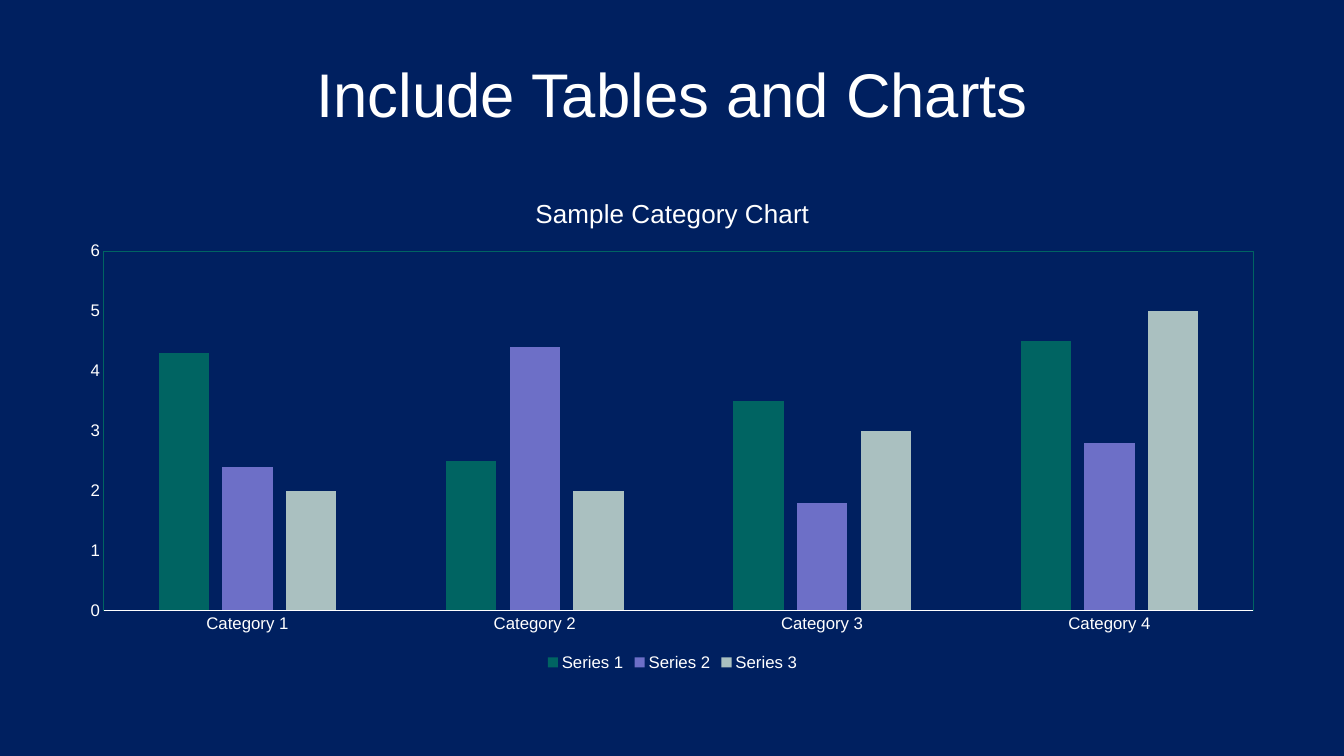
"""Build a slide with a title and a clustered column chart."""
from pptx import Presentation
from pptx.chart.data import CategoryChartData
from pptx.dml.color import RGBColor
from pptx.enum.chart import XL_CHART_TYPE, XL_LEGEND_POSITION, XL_TICK_MARK
from pptx.enum.text import MSO_ANCHOR, PP_ALIGN
from pptx.oxml import parse_xml
from pptx.oxml.ns import nsdecls
from pptx.util import Inches, Pt

COLUMNS = XL_CHART_TYPE.COLUMN_CLUSTERED
BOTTOM = XL_LEGEND_POSITION.BOTTOM
NO_TICK = XL_TICK_MARK.NONE
MIDDLE = MSO_ANCHOR.MIDDLE
CENTER = PP_ALIGN.CENTER

TITLE = "Include Tables and Charts"
CHART_TITLE = "Sample Category Chart"
CATEGORIES = ["Category 1", "Category 2", "Category 3", "Category 4"]
SERIES = [
    ("Series 1", (4.3, 2.5, 3.5, 4.5), "green"),
    ("Series 2", (2.4, 4.4, 1.8, 2.8), "violet"),
    ("Series 3", (2, 2, 3, 5), "grey"),
]
COLORS = {
    "navy": "002060",
    "white": "FFFFFF",
    "green": "006462",
    "violet": "6D6FC7",
    "grey": "AAC0C0",
}
FONT = "Arial"
TITLE_BOX = (0.67, 0.3, 12, 1.25)
CHART_BOX = (0.67, 1.75, 12, 4.95)
PLOT_LAYOUT = {"x": 0.03, "y": 0.15, "w": 0.95, "h": 0.72}


def color(name):
    return RGBColor.from_string(COLORS[name])


def set_values(target, values):
    for name, value in values.items():
        setattr(target, name, value)


def style_font(font, size):
    set_values(font, {"name": FONT, "size": Pt(size), "bold": False})
    font.color.rgb = color("white")


def add_title(page):
    box = page.shapes.title
    places = map(Inches, TITLE_BOX)
    set_values(box, dict(zip(("left", "top", "width", "height"), places)))
    set_values(box.text_frame, {"text": TITLE, "vertical_anchor": MIDDLE})
    para = box.text_frame.paragraphs[0]
    para.alignment = CENTER
    style_font(para.runs[0].font, 44)


def frame_plot(chart):
    plot_area = chart._chartSpace.chart.plotArea
    for layout in plot_area.xpath("c:layout"):
        plot_area.remove(layout)
    sizes = "".join(f'<c:{key} val="{value}"/>' for key, value in PLOT_LAYOUT.items())
    plot_area.insert(0, parse_xml(
        f'<c:layout {nsdecls("c")}><c:manualLayout><c:layoutTarget val="inner"/>'
        f'<c:xMode val="edge"/><c:yMode val="edge"/>{sizes}'
        '</c:manualLayout></c:layout>'))
    plot_area.append(parse_xml(
        f'<c:spPr {nsdecls("c", "a")}><a:noFill/><a:ln w="9525"><a:solidFill>'
        f'<a:srgbClr val="{COLORS["green"]}"/></a:solidFill></a:ln></c:spPr>'))


def add_columns(page):
    data = CategoryChartData()
    data.categories = CATEGORIES
    for name, values, _ in SERIES:
        data.add_series(name, values)
    chart = page.shapes.add_chart(COLUMNS, *map(Inches, CHART_BOX), data).chart
    style_font(chart.font, 10)

    chart.has_title = True
    chart.chart_title.include_in_layout = False
    heading = chart.chart_title.text_frame
    heading.text = CHART_TITLE
    style_font(heading.paragraphs[0].runs[0].font, 18.6)

    chart.has_legend = True
    set_values(chart.legend, {"position": BOTTOM, "include_in_layout": False})
    style_font(chart.legend.font, 12)

    for axis in (chart.category_axis, chart.value_axis):
        set_values(axis, {"major_tick_mark": NO_TICK, "minor_tick_mark": NO_TICK,
                          "has_major_gridlines": False})
        style_font(axis.tick_labels.font, 12)
    line = chart.category_axis.format.line
    line.width = Pt(0.75)
    line.color.rgb = color("white")
    set_values(chart.value_axis, {"minimum_scale": 0, "maximum_scale": 6, "major_unit": 1})
    chart.value_axis.format.line.fill.background()

    plot = chart.plots[0]
    set_values(plot, {"gap_width": 219, "overlap": -27, "vary_by_categories": False})
    for series, (_, _, tone) in zip(plot.series, SERIES):
        series.format.fill.solid()
        series.format.fill.fore_color.rgb = color(tone)
    frame_plot(chart)


def main():
    deck = Presentation()
    set_values(deck, {"slide_width": Inches(13.33), "slide_height": Inches(7.5)})
    page = deck.slides.add_slide(deck.slide_layouts[5])
    page.background.fill.solid()
    page.background.fill.fore_color.rgb = color("navy")
    add_title(page)
    add_columns(page)
    deck.save("out.pptx")


if __name__ == "__main__":
    main()
